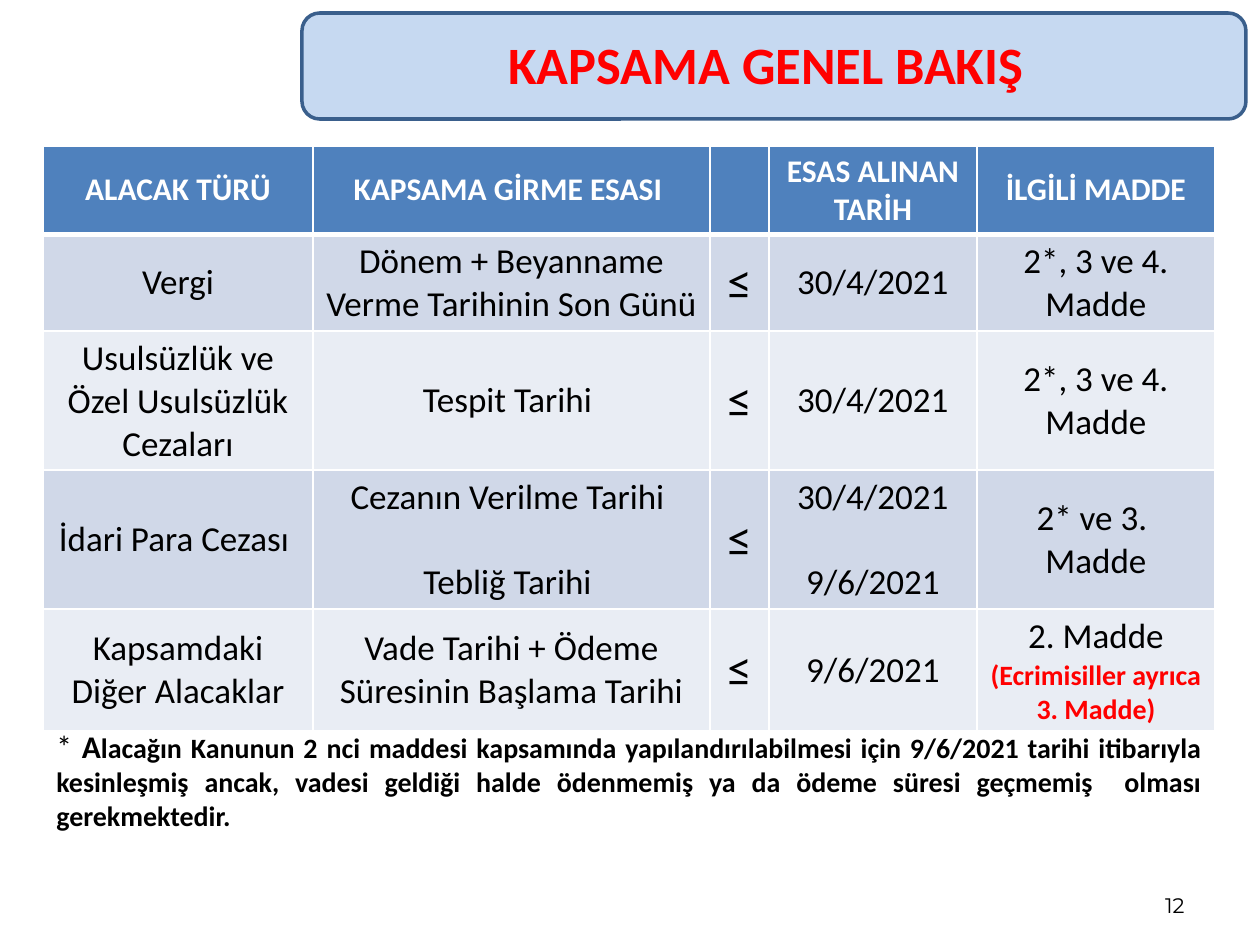
from dataclasses import dataclass

from lxml import etree
from pptx import Presentation
from pptx import util as u
from pptx.dml.color import RGBColor
from pptx.enum import shapes, text
from pptx.oxml.ns import qn

EMU_PER_PX = 914400 / 126
COLORS = {
    "black": "000000", "white": "FFFFFF", "red": "FF0000",
    "banner": "C6D9F1", "banner_line": "3A5F8C",
    "header": "4F81BD", "odd": "D0D8E8", "even": "E9EDF4",
}
CENTER = text.PP_ALIGN.CENTER


@dataclass
class Span:
    text: str
    size: int = 20
    color: str = "black"
    bold: bool = False
    font: str = "Calibri"


@dataclass
class Para:
    spans: list[Span]
    align: text.PP_ALIGN = CENTER
    before: int = 0


@dataclass
class Label:
    box: tuple[int, int, int, int]
    para: Para
    anchor: text.MSO_ANCHOR = text.MSO_ANCHOR.TOP
    wrap: bool = True


def px(length: int) -> int:
    return round(length * EMU_PER_PX)


def rgb(name: str) -> RGBColor:
    return RGBColor.from_string(COLORS[name])


def write(frame, paras: list[Para]) -> None:
    for index, item in enumerate(paras):
        para = frame.add_paragraph() if index else frame.paragraphs[0]
        para.alignment = item.align
        if item.before:
            para.space_before = u.Pt(item.before)
        for span in item.spans:
            run = para.add_run()
            run.text = span.text
            values = {"size": u.Pt(span.size), "bold": span.bold, "name": span.font}
            for name, value in values.items():
                setattr(run.font, name, value)
            run.font.color.rgb = rgb(span.color)


def draw_label(page, label: Label) -> None:
    frame = page.shapes.add_textbox(*map(px, label.box)).text_frame
    frame.word_wrap = label.wrap
    frame.vertical_anchor = label.anchor
    write(frame, [label.para])


def draw_borders(cell, widths: dict[str, int]) -> None:
    properties = cell._tc.get_or_add_tcPr()
    for index, (side, width) in enumerate(widths.items()):
        line = etree.Element(qn(f"a:ln{side}"), w=str(u.Pt(width)))
        fill = etree.SubElement(line, qn("a:solidFill"))
        etree.SubElement(fill, qn("a:srgbClr"), val=COLORS["white"])
        properties.insert(index, line)


def draw_table(page, left: int, top: int, columns: list[int],
               heights: list[int], rows: list[list[list[Para]]]) -> None:
    table = page.shapes.add_table(len(rows), len(columns), px(left), px(top),
                                  px(sum(columns)), px(sum(heights))).table
    for column, width in zip(table.columns, columns):
        column.width = px(width)
    for r, (row, height) in enumerate(zip(rows, heights)):
        table.rows[r].height = px(height)
        band = "header" if r == 0 else "odd" if r % 2 else "even"
        for c, paras in enumerate(row):
            cell = table.cell(r, c)
            cell.vertical_anchor = text.MSO_ANCHOR.MIDDLE
            cell.fill.solid()
            cell.fill.fore_color.rgb = rgb(band)
            draw_borders(cell, {"L": 1, "R": 1, "T": 3 if r == 1 else 1,
                                "B": 3 if r == 0 else 1})
            write(cell.text_frame, paras)


def lines(*texts: str, before: int = 0) -> list[Para]:
    return [Para([Span(line)], before=before if index else 0)
            for index, line in enumerate(texts)]


def heading(title: str) -> list[Para]:
    return [Para([Span(title, 18, "white", True)])] if title else []


def main() -> None:
    deck = Presentation()
    deck.slide_width, deck.slide_height = px(1260), px(945)
    page = deck.slides.add_slide(deck.slide_layouts[6])

    # Title banner
    banner = page.shapes.add_shape(shapes.MSO_SHAPE.ROUNDED_RECTANGLE,
                                   *map(px, (302, 13, 944, 106)))
    banner.shadow.inherit = False
    banner.fill.solid()
    banner.fill.fore_color.rgb = rgb("banner")
    banner.line.color.rgb = rgb("banner_line")
    banner.line.width = u.Pt(2)
    draw_label(page, Label((493, 26, 546, 77), Para(
        [Span("KAPSAMA GENEL BAKIŞ", 30, "red", True)]), wrap=False))

    # Scope table
    headings = ["ALACAK TÜRÜ", "KAPSAMA GİRME ESASI ", "",
                "ESAS ALINAN TARİH", "İLGİLİ MADDE"]
    until = [Para([Span("≤", 28)])]
    gap = 24
    rows = [
        [heading(title) for title in headings],
        [lines("Vergi"), lines("Dönem + Beyanname Verme Tarihinin Son Günü "),
         until, lines("30/4/2021"), lines("2*, 3 ve 4. Madde")],
        [lines("Usulsüzlük ve Özel Usulsüzlük Cezaları"), lines("Tespit Tarihi "),
         until, lines("30/4/2021"), lines("2*, 3 ve 4. Madde")],
        [lines("İdari Para Cezası "),
         lines("Cezanın Verilme Tarihi ", "Tebliğ Tarihi ", before=gap),
         until, lines("30/4/2021", "9/6/2021", before=gap),
         lines("2* ve 3. ", "Madde")],
        [lines("Kapsamdaki Diğer Alacaklar"),
         lines("Vade Tarihi + Ödeme Süresinin Başlama Tarihi"),
         until, lines("9/6/2021"),
         lines("2. Madde") + [Para([Span("(Ecrimisiller ayrıca 3. Madde)",
                                         16, "red", True)])]],
    ]
    draw_table(page, 43, 146, [270, 397, 59, 208, 238],
               [87, 97, 139, 139, 120], rows)

    # Footnote and page number
    note = ("lacağın Kanunun 2 nci maddesi kapsamında yapılandırılabilmesi için "
            "9/6/2021 tarihi itibarıyla kesinleşmiş ancak, vadesi geldiği halde "
            "ödenmemiş ya da ödeme süresi geçmemiş  olması gerekmektedir.")
    draw_label(page, Label((44, 721, 1171, 118), Para(
        [Span("* ", 18), Span("A", 18, bold=True), Span(note, 16, bold=True)],
        text.PP_ALIGN.JUSTIFY)))
    draw_label(page, Label((903, 861, 294, 63), Para(
        [Span("12", 12, font="Montserrat")], text.PP_ALIGN.RIGHT),
        text.MSO_ANCHOR.BOTTOM))

    deck.save("out.pptx")


if __name__ == "__main__":
    main()
